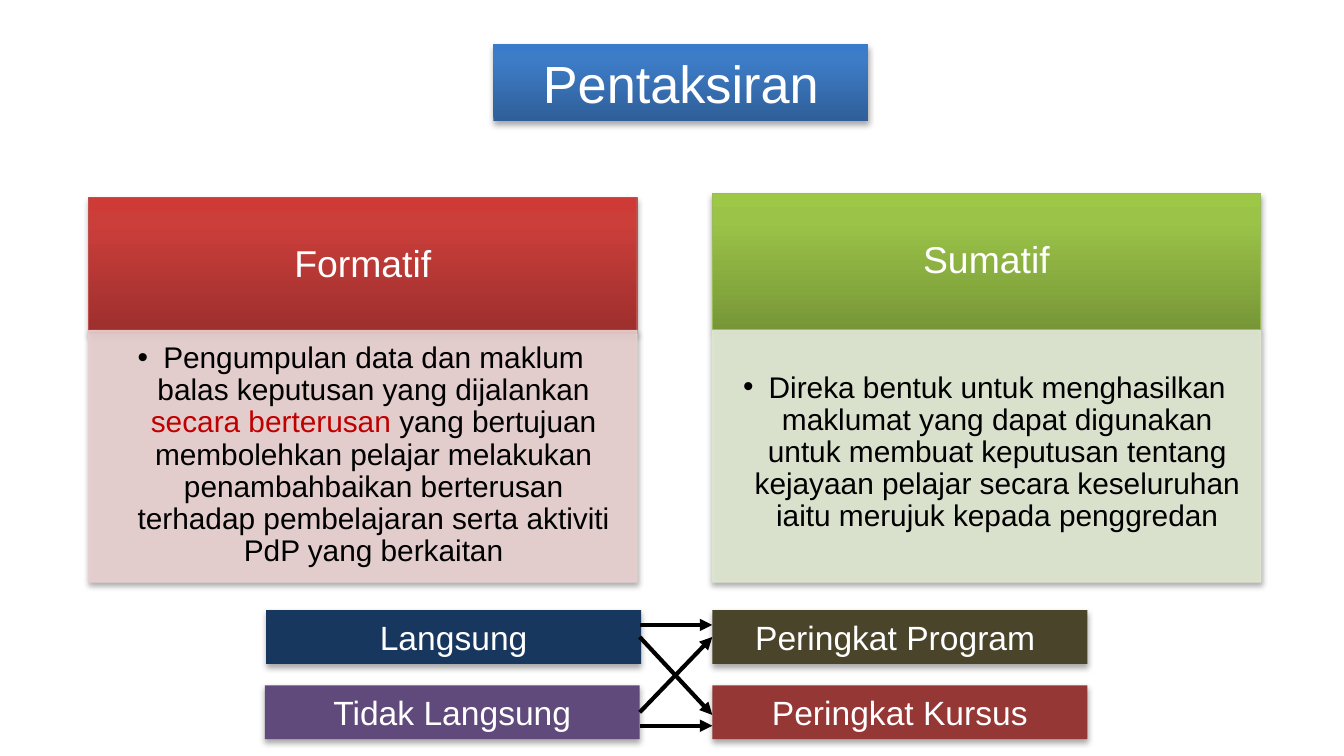
import copy

import pptx
import pptx.dml.color
import pptx.enum.shapes
import pptx.enum.text
import pptx.oxml
import pptx.oxml.ns
import pptx.util
from pptx.util import Inches

ALIGN = pptx.enum.text.PP_ALIGN
ANCHOR = pptx.enum.text.MSO_ANCHOR
SHAPES = pptx.enum.shapes
qn = pptx.oxml.ns.qn
NS = pptx.oxml.ns.nsdecls("a")


def color(value):
    return pptx.dml.color.RGBColor.from_string(value)


def format_box(box, place, fills, spans, size, line=None, alpha=None,
               insets=(0.1, 0.05, 0.1, 0.05), anchor=ANCHOR.MIDDLE, spacing=1.0):
    """Place a box, give it fill, line, soft shadow and one centred paragraph."""
    box.left, box.top, box.width, box.height = [Inches(n) for n in place]
    properties = box._element.spPr
    if len(fills) == 1:
        box.fill.solid()
        box.fill.fore_color.rgb = color(fills[0])
    else:
        box.fill.gradient()
        box.fill.gradient_angle = 90
        stop_list = properties.find(".//" + qn("a:gsLst"))
        stop_list.append(copy.deepcopy(stop_list[-1]))
        for stop, value, position in zip(box.fill.gradient_stops, fills, (0, 0.8, 1)):
            stop.color.rgb = color(value)
            stop.position = position
    if line:
        box.line.color.rgb = color(line)
        box.line.width = pptx.util.Pt(0.75)
    else:
        box.line.fill.background()
    if alpha:
        for tint in properties.iter(qn("a:srgbClr")):
            tint.append(pptx.oxml.parse_xml(f'<a:alpha {NS} val="{alpha * 1000}"/>'))
    box.shadow.inherit = False
    properties.find(qn("a:effectLst")).append(pptx.oxml.parse_xml(
        f'<a:outerShdw {NS} blurRad="40000" dist="23000" dir="5400000" rotWithShape="0">'
        '<a:srgbClr val="000000"><a:alpha val="35000"/></a:srgbClr></a:outerShdw>'))

    frame = box.text_frame
    sides = ("margin_left", "margin_top", "margin_right", "margin_bottom")
    settings = dict(zip(sides, [Inches(n) for n in insets]))
    settings.update(word_wrap=True, vertical_anchor=anchor,
                    auto_size=pptx.enum.text.MSO_AUTO_SIZE.NONE)
    for name, value in settings.items():
        setattr(frame, name, value)
    para = frame.paragraphs[0]
    for name, value in {"alignment": ALIGN.CENTER, "line_spacing": spacing,
                        "space_before": 0, "space_after": 0}.items():
        setattr(para, name, value)
    for text, text_color in spans:
        span = para.add_run()
        span.text = text
        for name, value in {"name": "Arial", "size": pptx.util.Pt(size),
                            "bold": False}.items():
            setattr(span.font, name, value)
        span.font.color.rgb = color(text_color)


deck = pptx.Presentation()
deck.slide_width, deck.slide_height = Inches(10), Inches(10 * 9 / 16)
page = deck.slides.add_slide(deck.slide_layouts.get_by_name("Comparison"))
holders = list(page.placeholders)

format_box(holders[0], (3.67, 0.33, 2.79, 0.57), ("2F5F99", "3D7CC7", "3A7CCB"),
           [("Pentaksiran", "FFFFFF")], 28)

# Two columns: heading above a bulleted description
columns = [
    ("Formatif", 0.66, 1.47, ("9C2F2D", "CB3E3A", "CE3B37"), "C0504D", "E8D0D0",
     ANCHOR.TOP,
     [("Pengumpulan data dan maklum balas keputusan yang dijalankan ", "000000"),
      ("secara berterusan ", "C00000"),
      ("yang bertujuan membolehkan pelajar melakukan penambahbaikan berterusan "
       "terhadap pembelajaran serta aktiviti PdP yang berkaitan", "000000")]),
    ("Sumatif", 5.3, 1.44, ("779737", "9BC348", "9DC746"), "9BBB59", "DEE7D1",
     ANCHOR.MIDDLE,
     [("Direka bentuk untuk menghasilkan maklumat yang dapat digunakan untuk membuat "
       "keputusan tentang kejayaan pelajar secara keseluruhan iaitu merujuk kepada "
       "penggredan", "000000")]),
]
for index, (heading, left, top, fills, line, tint, anchor, spans) in enumerate(columns):
    head, body = holders[1 + 2 * index:3 + 2 * index]
    format_box(head, (left, top, 4.08, 1.01), fills, [(heading, "FFFFFF")], 20,
               line=line, insets=(0.16, 0.09, 0.16, 0.09), spacing=0.9)
    bullet = body.text_frame.paragraphs[0]._p.get_or_add_pPr()
    bullet.set("marL", str(Inches(0.19)))
    bullet.set("indent", str(Inches(-0.19)))
    bullet.append(pptx.oxml.parse_xml(f'<a:buChar {NS} char="•"/>'))
    format_box(body, (left, 2.46, 4.08, 1.87), (tint,), spans, 16, line=tint, alpha=90,
               insets=(0.09, 0.09, 0.12, 0.14), anchor=anchor, spacing=0.9)

# Methods on the left, levels on the right
labels = [
    ("Langsung", 1.98, 4.54, "17375E"),
    ("Tidak Langsung", 1.97, 5.1, "604A7B"),
    ("Peringkat Program ", 5.3, 4.54, "4A452A"),
    ("Peringkat Kursus", 5.3, 5.1, "953735"),
]
for text, left, top, fill in labels:
    box = page.shapes.add_shape(SHAPES.MSO_SHAPE.RECTANGLE, 0, 0, 0, 0)
    format_box(box, (left, top, 2.79, 0.4), (fill,), [(text, "FFFFFF")], 18)

# Every method leads to every level
for start, end in [(4.74, 5.32), (5.3, 4.74), (4.65, 4.65), (5.4, 5.4)]:
    arrow = page.shapes.add_connector(SHAPES.MSO_CONNECTOR.STRAIGHT, Inches(4.76),
                                      Inches(start), Inches(5.3), Inches(end))
    arrow.line.color.rgb = color("000000")
    arrow.line.width = pptx.util.Pt(2.25)
    arrow.line._get_or_add_ln().append(
        pptx.oxml.parse_xml(f'<a:tailEnd {NS} type="triangle"/>'))
    arrow._element.spPr.append(pptx.oxml.parse_xml(f"<a:effectLst {NS}/>"))

deck.save("out.pptx")
